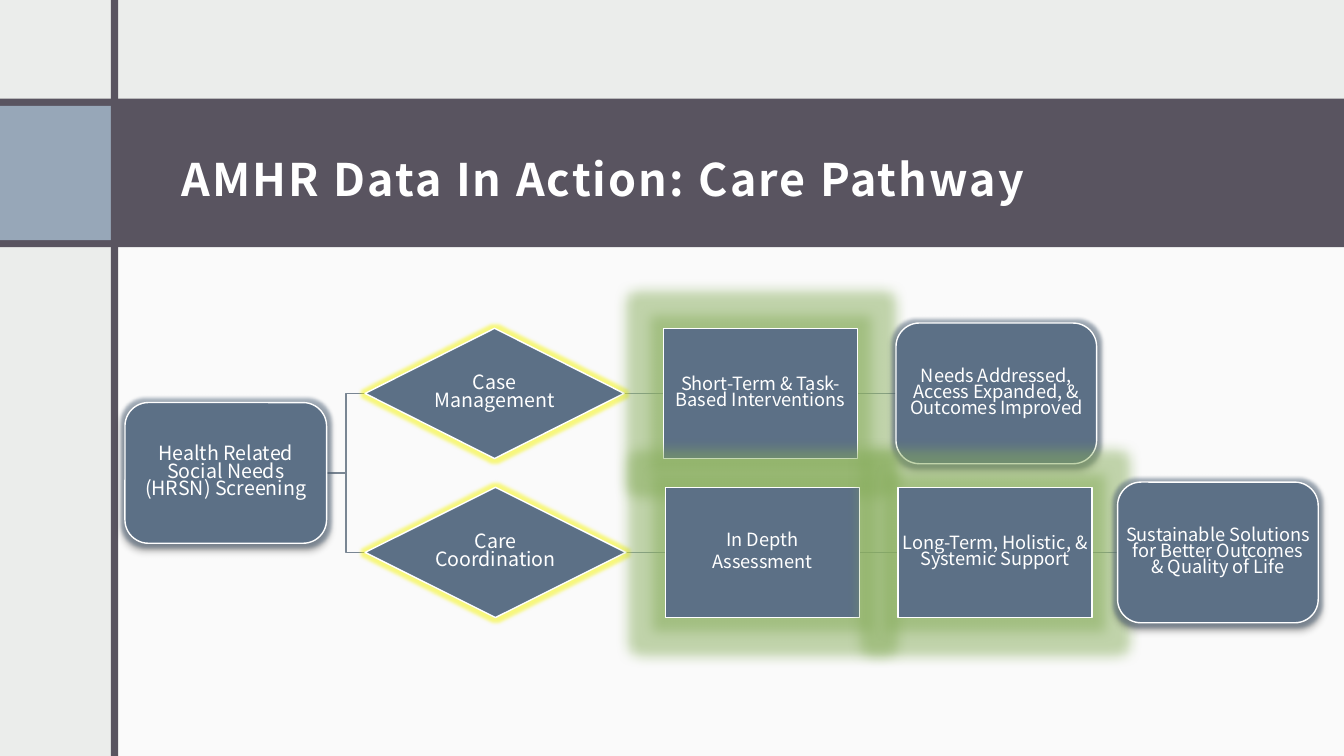
import pptx
import pptx.util
import pptx.dml.color
import pptx.enum.shapes
import pptx.enum.text
import pptx.oxml
import pptx.oxml.ns

Pt = pptx.util.Pt
RGBColor = pptx.dml.color.RGBColor
Shape = pptx.enum.shapes.MSO_SHAPE
Connector = pptx.enum.shapes.MSO_CONNECTOR
Anchor = pptx.enum.text.MSO_ANCHOR
Align = pptx.enum.text.PP_ALIGN

FONT = "Noto Sans CJK JP"
WHITE = RGBColor(0xFF, 0xFF, 0xFF)
MIST = RGBColor(0xEB, 0xED, 0xEB)
PANEL = RGBColor(0xFA, 0xFA, 0xFA)
PLUM = RGBColor(0x59, 0x54, 0x60)
SKY = RGBColor(0x97, 0xA7, 0xB8)
SLATE = RGBColor(0x5C, 0x70, 0x86)
BRANCH_LINE = RGBColor(0x79, 0x86, 0x93)
STEP_LINE = RGBColor(0x89, 0x98, 0xA7)
YELLOW = RGBColor(0xF5, 0xF5, 0x00)
GREEN = RGBColor(0x86, 0xAC, 0x5A)

SHADOW = ('<a:outerShdw blurRad="50800" dist="38100" dir="5400000" rotWithShape="0">'
          '<a:srgbClr val="000000"><a:alpha val="40000"/></a:srgbClr></a:outerShdw>')

# kind: preset, height, glow colour, glow radius, has shadow
KINDS = {
    "outcome": (Shape.FLOWCHART_ALTERNATE_PROCESS, 100.5, SLATE, 5, True),
    "decision": (Shape.FLOWCHART_DECISION, 93, YELLOW, 5, False),
    "step": (Shape.RECTANGLE, 93, GREEN, 18, False),
}
ROOT = ("outcome", 89.3, 144, 14, ["Health Related Social Needs (HRSN) Screening"])
CASE_ROW = [
    ("decision", 260.8, 185, 14, ["Case Management"]),
    ("step", 474, 138.5, 13, ["Short-Term & Task-Based Interventions"]),
    ("outcome", 640, 143.3, 13, ["Needs Addressed, Access Expanded, & Outcomes Improved"]),
]
CARE_ROW = [
    ("decision", 260.8, 186.3, 14, ["Care Coordination"]),
    ("step", 475.3, 138.5, 13, ["In Depth", "Assessment"]),
    ("step", 641.5, 138.5, 13, ["Long-Term, Holistic, & Systemic Support"]),
    ("outcome", 798.3, 143.3, 13, ["Sustainable Solutions for Better Outcomes & Quality of Life"]),
]


def set_effects(shape, effects=""):
    """Give a shape or connector its own list of effects."""
    properties = shape.element.spPr
    for old in properties.findall(pptx.oxml.ns.qn("a:effectLst")):
        properties.remove(old)
    properties.append(pptx.oxml.parse_xml(
        f'<a:effectLst {pptx.oxml.ns.nsdecls("a")}>{effects}</a:effectLst>'))


def add_span(para, text, size):
    """Add one white run to a paragraph."""
    span = para.add_run()
    span.text = text
    span.font.name = FONT
    span.font.size = Pt(size)
    span.font.color.rgb = WHITE
    return span


def set_margins(frame, left, top, right, bottom):
    """Set the four inner margins of a text frame."""
    frame.margin_left, frame.margin_top = Pt(left), Pt(top)
    frame.margin_right, frame.margin_bottom = Pt(right), Pt(bottom)


def add_backdrop(page, width, height):
    """Lay the panel, bands and rule behind the title."""
    page.background.fill.solid()
    page.background.fill.fore_color.rgb = MIST
    bands = [
        (82, 168, width - 82, height - 168, PANEL),
        (0, 70.5, width, 106, PLUM),
        (0, 75.6, 79.2, 96, SKY),
        (79.2, 0, 5.2, height, PLUM),
    ]
    for left, top, wide, high, colour in bands:
        band = page.shapes.add_shape(Shape.RECTANGLE, Pt(left), Pt(top), Pt(wide), Pt(high))
        band.shadow.inherit = False
        band.fill.solid()
        band.fill.fore_color.rgb = colour
        band.line.fill.background()
        page.shapes.title.element.addprevious(band.element)


def add_title(page, left, top, width, height):
    """Place and format the title."""
    title = page.shapes.title
    title.left, title.top, title.width, title.height = Pt(left), Pt(top), Pt(width), Pt(height)
    frame = title.text_frame
    frame.word_wrap = True
    frame.auto_size = pptx.enum.text.MSO_AUTO_SIZE.NONE
    frame.vertical_anchor = Anchor.MIDDLE
    set_margins(frame, 8.64, 14.4, 8.64, 7.2)
    para = frame.paragraphs[0]
    para.alignment = Align.LEFT
    span = add_span(para, "AMHR Data In Action: Care Pathway", 32)
    span.font.bold = True
    span.font.element.set("spc", "150") if hasattr(span.font, "element") else \
        para.runs[0]._r.get_or_add_rPr().set("spc", "150")


def add_node(page, middle, node):
    """Draw one flow node centred on a height."""
    kind, left, width, size, lines = node
    preset, height, glow, radius, shadowed = KINDS[kind]
    box = page.shapes.add_shape(preset, Pt(left), Pt(middle - height / 2), Pt(width), Pt(height))
    box.fill.solid()
    box.fill.fore_color.rgb = SLATE
    box.line.color.rgb = WHITE
    box.line.width = Pt(1)
    halo = (f'<a:glow rad="{Pt(radius)}"><a:srgbClr val="{glow}">'
            '<a:alpha val="50000"/></a:srgbClr></a:glow>')
    set_effects(box, halo + (SHADOW if shadowed else ""))
    frame = box.text_frame
    frame.word_wrap = True
    frame.vertical_anchor = Anchor.MIDDLE
    set_margins(frame, 0.7, 0.7, 0.7, 0.7)
    for index, line in enumerate(lines):
        para = frame.add_paragraph() if index else frame.paragraphs[0]
        para.alignment = Align.CENTER
        para.line_spacing = 0.74
        para.space_before = Pt(4.5 if index else 0)
        add_span(para, line, size)
    return box


def link(page, start, end, style, colour, behind):
    """Join the right side of one node to the left side of the next."""
    line = page.shapes.add_connector(style, 0, 0, 0, 0)
    line.begin_connect(start, 3)
    line.end_connect(end, 1)
    line.line.color.rgb = colour
    line.line.width = Pt(1)
    set_effects(line)
    behind.element.addprevious(line.element)


def add_pathway(page, top, row_gap):
    """Draw the screening node and its two rows of care."""
    root = add_node(page, top + row_gap / 2, ROOT)
    for index, row in enumerate((CASE_ROW, CARE_ROW)):
        boxes = [add_node(page, top + index * row_gap, node) for node in row]
        link(page, root, boxes[0], Connector.ELBOW, BRANCH_LINE, root)
        for start, end in zip(boxes, boxes[1:]):
            link(page, start, end, Connector.STRAIGHT, STEP_LINE, root)


def main():
    """Build the deck and save it."""
    deck = pptx.Presentation()
    deck.slide_width, deck.slide_height = Pt(960), Pt(540)
    page = deck.slides.add_slide(deck.slide_layouts[5])
    add_backdrop(page, 960, 540)
    add_title(page, 121, 75.6, 788.4, 96)
    add_pathway(page, 281, 113.6)
    deck.save("out.pptx")


if __name__ == "__main__":
    main()
